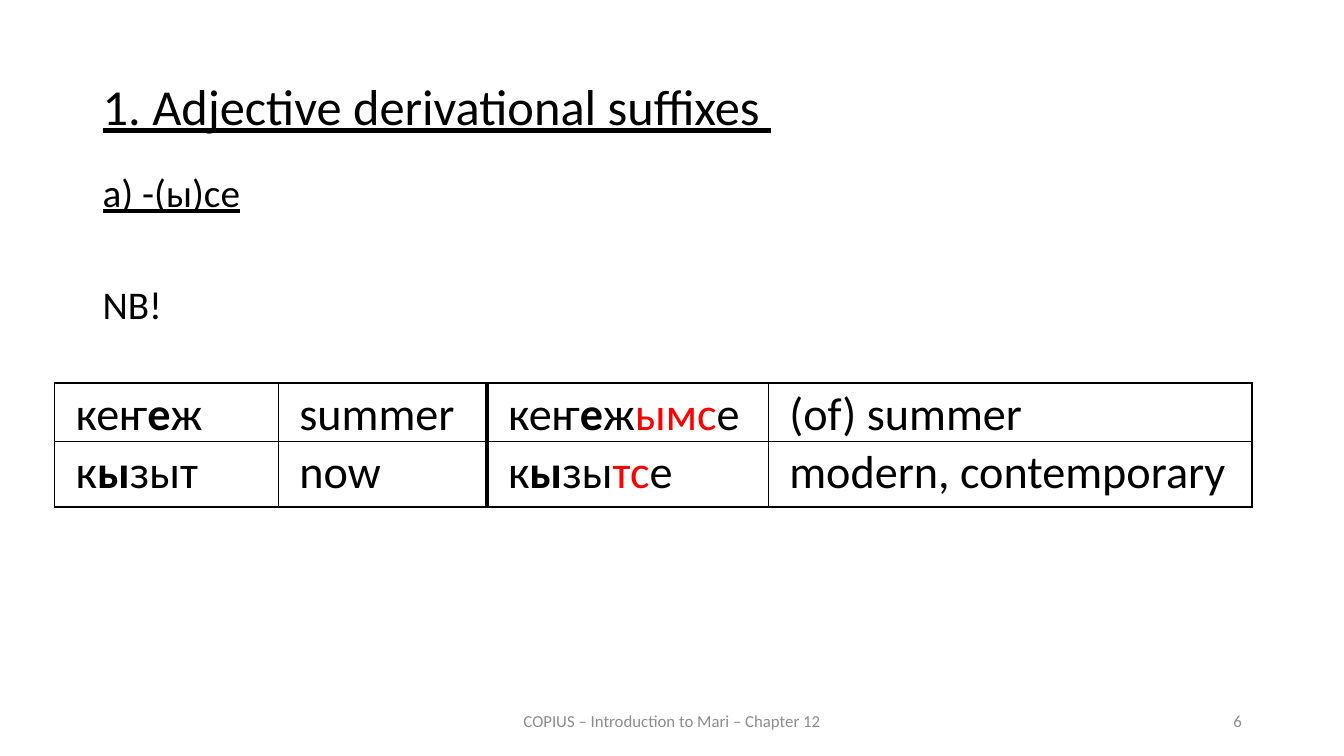
from lxml.etree import SubElement
from pptx import Presentation
from pptx.dml.color import RGBColor
from pptx.enum.text import MSO_ANCHOR, PP_ALIGN
from pptx.oxml.ns import qn
from pptx.util import Inches, Pt

SLIDE_WIDTH, SLIDE_HEIGHT = Inches(13.33), Inches(7.5)
BLACK, RED, GRAY = "000000", "FF0000", "8C8C8C"
BOLD, SUFFIX = {"bold": True}, {"color": RED}

MARGIN, CONTENT_WIDTH = 6.9, 86.25
FOOTER_TOP, FOOTER_HEIGHT = 92.67, 5.33
COLUMN_WIDTHS = [16.65, 15.53, 20.93, 36]
ROW_HEIGHTS = [7.6, 8.67]
COLUMN_RULES = [1.5, 1, 3, 1, 1.5]
ROW_RULES = [1.5, 1, 1.5]

WORDS = [
    [
        [("кеҥ", {}), ("е", BOLD), ("ж", {})],
        [("summer", {})],
        [("кеҥ", {}), ("е", BOLD), ("ж", {}), ("ымс", SUFFIX), ("е", {})],
        [("(of) summer", {})],
    ],
    [
        [("к", {}), ("ы", BOLD), ("зыт", {})],
        [("now", {})],
        [("к", {}), ("ы", BOLD), ("зы", {}), ("тс", SUFFIX), ("е", {})],
        [("modern, contemporary", {})],
    ],
]


def across(percent):
    """Return a share of the slide's width."""
    return round(SLIDE_WIDTH * percent / 100)


def down(percent):
    """Return a share of the slide's height."""
    return round(SLIDE_HEIGHT * percent / 100)


def rgb(value):
    """Turn a hex string into a colour."""
    return RGBColor.from_string(value)


def write(paragraph, text, size=28, color=BLACK, bold=False, underline=False,
          align=PP_ALIGN.LEFT, line=None, before=0):
    """Add one formatted run and set its paragraph's layout."""
    paragraph.alignment = align
    paragraph.line_spacing = line
    paragraph.space_before = Pt(before)
    run = paragraph.add_run()
    run.text = text
    font = run.font
    font.name, font.size = "Calibri", Pt(size)
    font.bold, font.underline = bold, underline
    font.color.rgb = rgb(color)


def add_text_area(slide, left, top, width, height, anchor=MSO_ANCHOR.TOP):
    """Add a wrapping text box and return its text frame."""
    area = slide.shapes.add_textbox(across(left), down(top), across(width), down(height))
    area.text_frame.word_wrap = True
    area.text_frame.vertical_anchor = anchor
    return area.text_frame


def add_footer(slide, left, width, text, align):
    """Add a small gray text on the footer line."""
    footer = add_text_area(slide, left, FOOTER_TOP, width, FOOTER_HEIGHT, MSO_ANCHOR.MIDDLE)
    write(footer.paragraphs[0], text, size=12, color=GRAY, align=align)


def rule_cell(cell, **widths):
    """Draw black cell borders with the given widths in points."""
    properties = cell._tc.get_or_add_tcPr()
    for side, width in widths.items():
        border = SubElement(properties, qn(f"a:ln{side}"), w=str(Pt(width)))
        fill = SubElement(border, qn("a:solidFill"))
        SubElement(fill, qn("a:srgbClr"), val=BLACK)


def add_word_table(slide, left, top):
    """Add the table of base words and derived adjectives."""
    frame = slide.shapes.add_table(
        len(WORDS), len(COLUMN_WIDTHS), across(left), down(top),
        across(sum(COLUMN_WIDTHS)), down(sum(ROW_HEIGHTS)))
    table = frame.table
    table.first_row = table.horz_banding = False
    for column, width in zip(table.columns, COLUMN_WIDTHS):
        column.width = across(width)
    for row, height in zip(table.rows, ROW_HEIGHTS):
        row.height = down(height)
    for r, entries in enumerate(WORDS):
        for c, pieces in enumerate(entries):
            cell = table.cell(r, c)
            cell.margin_left = cell.margin_right = Inches(0.21)
            cell.margin_top, cell.margin_bottom = Inches(0.03), 0
            rule_cell(cell, L=COLUMN_RULES[c], R=COLUMN_RULES[c + 1],
                      T=ROW_RULES[r], B=ROW_RULES[r + 1])
            cell.fill.background()
            for text, style in pieces:
                write(cell.text_frame.paragraphs[0], text, size=33,
                      align=PP_ALIGN.JUSTIFY, **style)


def main():
    """Build the slide on adjective suffixes and save it."""
    deck = Presentation()
    deck.slide_width, deck.slide_height = SLIDE_WIDTH, SLIDE_HEIGHT
    slide = deck.slides.add_slide(deck.slide_layouts[6])

    heading = add_text_area(slide, MARGIN, 10.13, CONTENT_WIDTH, 11.07)
    write(heading.paragraphs[0], "1. Adjective derivational suffixes ", size=36,
          underline=True, align=PP_ALIGN.JUSTIFY, line=0.9, before=12)

    add_footer(slide, 33.13, 33.75, "COPIUS – Introduction to Mari – Chapter 12",
               PP_ALIGN.CENTER)
    add_footer(slide, 70.65, 22.5, "6", PP_ALIGN.RIGHT)

    suffix = add_text_area(slide, MARGIN, 22.27, CONTENT_WIDTH, 27.07)
    write(suffix.paragraphs[0], "a) -(ы)се", underline=True, line=0.9, before=10)
    write(suffix.add_paragraph(), "NB!", line=0.9, before=50)

    add_word_table(slide, 4.05, 50.67)
    deck.save("out.pptx")


if __name__ == "__main__":
    main()
